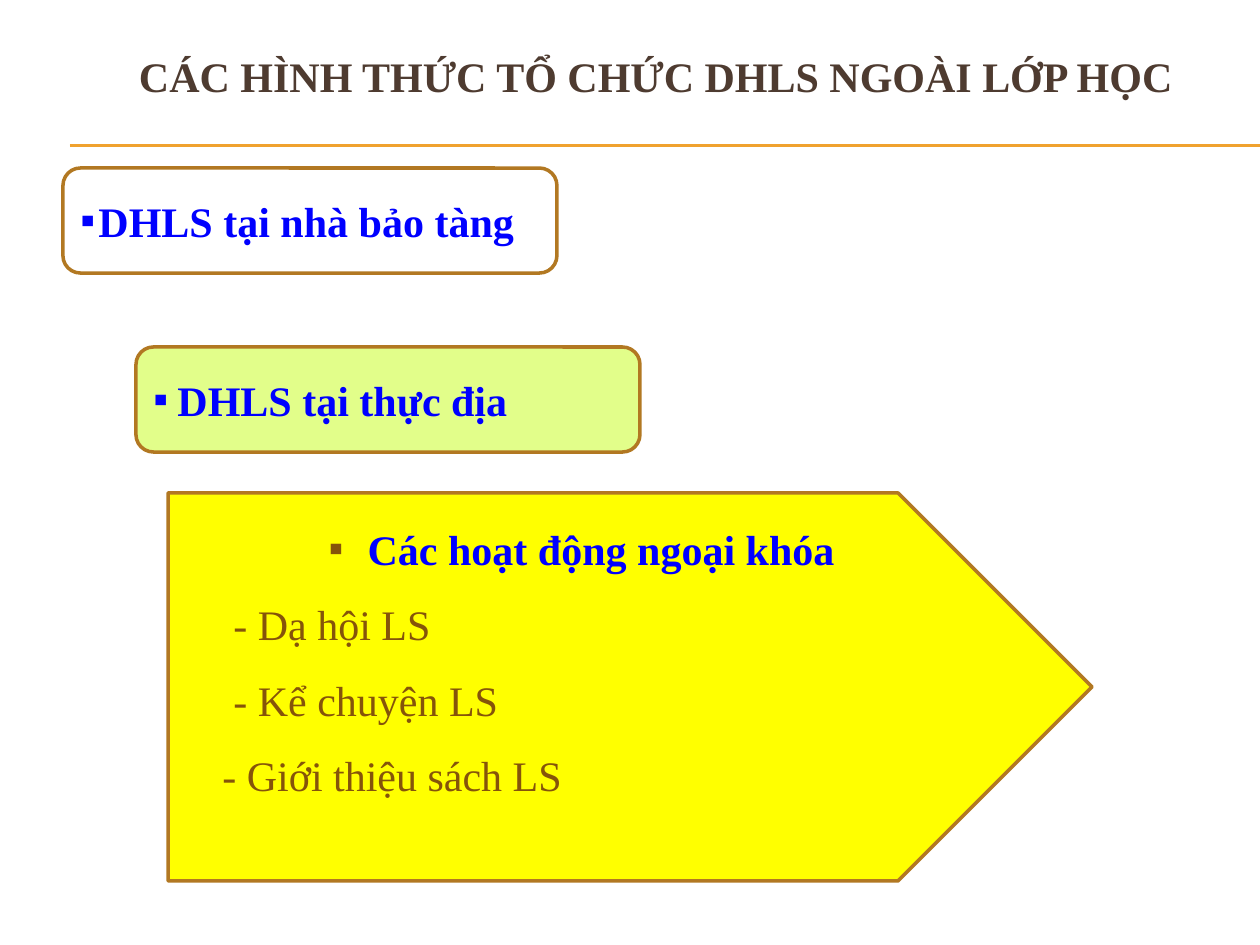
"""Build a slide on ways to teach history outside the classroom."""
from dataclasses import dataclass

from lxml import etree
from pptx import Presentation
from pptx.dml.color import RGBColor
from pptx.enum.shapes import MSO_CONNECTOR, MSO_SHAPE
from pptx.enum.text import MSO_ANCHOR, PP_ALIGN
from pptx.oxml.ns import qn
from pptx.util import Pt

ROUND, ARROW = MSO_SHAPE.ROUNDED_RECTANGLE, MSO_SHAPE.PENTAGON
LEFT, MID = PP_ALIGN.LEFT, PP_ALIGN.CENTER
LINE = MSO_CONNECTOR.STRAIGHT
CENTER = MSO_ANCHOR.MIDDLE
FONT = "Times New Roman"
SCALE = 914400 / 126
COLORS = {
    "title": "4E3B30", "rule": "F0A22E", "edge": "B27822", "blue": "0000FF",
    "brown": "85540A", "white": "FFFFFF", "green": "E2FE8A", "yellow": "FFFF00",
}


@dataclass
class Box:
    kind: MSO_SHAPE
    left: int
    top: int
    width: int
    height: int
    fill: str


def px(count: int) -> int:
    return round(count * SCALE)


def rgb(name: str) -> RGBColor:
    return RGBColor.from_string(COLORS[name])


def write(para, text: str, *, color: str, bold: bool = False, align=LEFT,
          space: float = 1, left: int = 0, mark: str = "", size: int = 24) -> None:
    para.alignment, para.line_spacing = align, space
    props = para._p.get_or_add_pPr()
    props.set("marL", str(px(left)))
    props.set("indent", str(px(-left) if mark else 0))
    if mark:
        tint = etree.SubElement(props, qn("a:buClr"))
        etree.SubElement(tint, qn("a:srgbClr"), val=COLORS[mark])
        etree.SubElement(props, qn("a:buSzPts"), val=str(size * 100))
        etree.SubElement(props, qn("a:buFont"), typeface=FONT)
        etree.SubElement(props, qn("a:buChar"), char="▪")
    run = para.add_run()
    run.text = text
    font = run.font
    font.name, font.size, font.bold = FONT, Pt(24), bold
    font.color.rgb = rgb(color)


def draw(slide, box: Box):
    shape = slide.shapes.add_shape(
        box.kind, px(box.left), px(box.top), px(box.width), px(box.height))
    shape.shadow.inherit = False
    shape.fill.solid()
    shape.fill.fore_color.rgb = rgb(box.fill)
    shape.line.color.rgb = rgb("edge")
    shape.line.width = Pt(2)
    frame = shape.text_frame
    frame.word_wrap, frame.vertical_anchor = True, CENTER
    return frame


def rule(slide, top: int) -> None:
    line = slide.shapes.add_connector(LINE, px(70), px(top), px(1260), px(top))
    line.line.color.rgb = rgb("rule")
    line.line.width = Pt(0.75)
    etree.SubElement(line._element.spPr, qn("a:effectLst"))


def main() -> None:
    deck = Presentation()
    deck.slide_width, deck.slide_height = px(1260), px(945)
    slide = deck.slides.add_slide(deck.slide_layouts[5])
    for top in (145, 146):
        rule(slide, top)

    title = slide.shapes.title
    title.left, title.top = px(139), px(42)
    title.width, title.height = px(1080), px(68)
    frame = title.text_frame
    frame.margin_left = frame.margin_right = 0
    frame.vertical_anchor = CENTER
    write(frame.paragraphs[0], "CÁC HÌNH THỨC TỔ CHỨC DHLS NGOÀI LỚP HỌC",
          color="title", bold=True)

    cards = (
        (Box(ROUND, 63, 168, 494, 105, "white"), "DHLS tại nhà bảo tàng", 18, 18),
        (Box(ROUND, 136, 347, 504, 105, "green"), "DHLS tại thực địa", 24, 24),
    )
    for box, text, left, size in cards:
        write(draw(slide, box).paragraphs[0], text, color="blue", bold=True,
              left=left, mark="blue", size=size)

    frame = draw(slide, Box(ARROW, 168, 493, 924, 388, "yellow"))
    frame.margin_bottom = px(82)
    write(frame.paragraphs[0], "Các hoạt động ngoại khóa", color="blue",
          bold=True, align=MID, space=1.5, left=39, mark="brown")
    items = (("- Dạ hội LS", 53), ("- Kể chuyện LS", 53),
             ("- Giới thiệu sách LS", 42))
    for text, left in items:
        write(frame.add_paragraph(), text, color="brown", space=1.5, left=left)

    deck.save("out.pptx")


if __name__ == "__main__":
    main()
